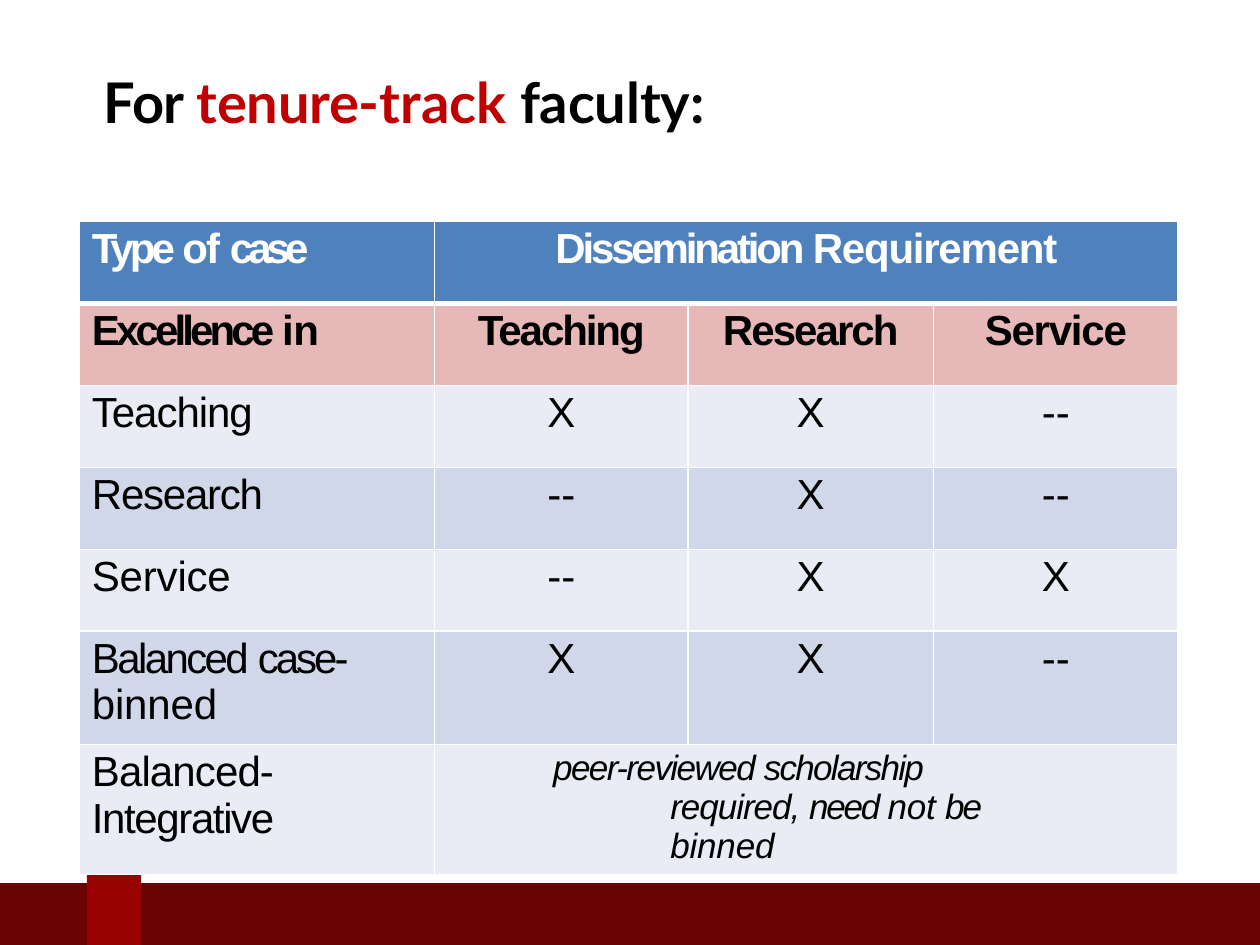
from dataclasses import dataclass

from lxml import etree
from pptx import Presentation, util as u
from pptx.dml.color import RGBColor
from pptx.enum import shapes, text
from pptx.oxml import ns


@dataclass(frozen=True)
class Theme:
    """Colours, typefaces and type sizes of the deck."""
    ink: str = "000000"
    white: str = "FFFFFF"
    accent: str = "C00000"
    bar: str = "690304"
    badge: str = "990000"
    header: str = "4F81BC"
    subheader: str = "E6B8B8"
    light: str = "E9ECF4"
    dark: str = "D0D7E8"
    title_face: str = "Lato"
    body_face: str = "Arial"
    title_size: int = 32
    body_size: int = 24
    note_size: int = 20


class SlideBuilder:
    """Adds styled elements to the current slide."""

    def __init__(self, page, theme):
        """Keep the page and its theme."""
        self.page = page
        self.theme = theme

    def fill_paragraph(self, para, spans, face, size, color, bold=False,
                       italic=False, left=0, hang=0, before=2):
        """Fill a paragraph with (text, spacing[, colour]) spans."""
        para.space_before = u.Pt(before)
        props = para._p.get_or_add_pPr()
        props.set("marL", str(u.Inches(left)))
        props.set("indent", str(u.Inches(hang)))
        fonts = [para.font]
        for words, spacing, *tint in spans:
            span = para.add_run()
            span.text = words
            span.font.color.rgb = RGBColor.from_string(tint[0] if tint else color)
            span._r.get_or_add_rPr().set("spc", str(round(spacing * 100)))
            fonts.append(span.font)
        for font in fonts:
            font.name, font.size = face, u.Pt(size)
            font.bold, font.italic = bold, italic

    def title(self, left, top, width, height, spans):
        """Add the slide heading."""
        box = self.page.shapes.add_textbox(
            u.Inches(left), u.Inches(top), u.Inches(width), u.Inches(height))
        frame = box.text_frame
        frame.word_wrap = True
        frame.vertical_anchor = text.MSO_ANCHOR.MIDDLE
        frame.margin_left = frame.margin_right = frame.margin_bottom = 0
        frame.margin_top = u.Inches(0.01)
        self.fill_paragraph(frame.paragraphs[0], spans, self.theme.title_face,
                            self.theme.title_size, self.theme.ink, bold=True,
                            left=0.01, before=1.1)

    def block(self, left, top, width, height, color):
        """Add a plain filled rectangle."""
        box = self.page.shapes.add_shape(
            shapes.MSO_SHAPE.RECTANGLE,
            u.Inches(left), u.Inches(top), u.Inches(width), u.Inches(height))
        box.shadow.inherit = False
        box.fill.solid()
        box.fill.fore_color.rgb = RGBColor.from_string(color)
        box.line.fill.background()

    def table(self, left, top, widths, heights):
        """Add an unstyled grid and return it."""
        grid = self.page.shapes.add_table(
            len(heights), len(widths), u.Inches(left), u.Inches(top),
            u.Inches(sum(widths)), u.Inches(sum(heights))).table
        grid.first_row = grid.horz_banding = False
        for column, width in zip(grid.columns, widths):
            column.width = u.Inches(width)
        for row, height in zip(grid.rows, heights):
            row.height = u.Inches(height)
        return grid

    def cell(self, cell, fill, top_line=1, bottom_line=1):
        """Set a cell's margins, borders and fill."""
        cell.margin_left = cell.margin_right = cell.margin_bottom = 0
        cell.margin_top = u.Inches(0.03)
        props = cell._tc.get_or_add_tcPr()
        for side, weight in zip("LRTB", (1, 1, top_line, bottom_line)):
            line = etree.SubElement(props, ns.qn(f"a:ln{side}"), w=str(u.Pt(weight)))
            paint = etree.SubElement(line, ns.qn("a:solidFill"))
            etree.SubElement(paint, ns.qn("a:srgbClr"), val=self.theme.white)
        cell.fill.solid()
        cell.fill.fore_color.rgb = RGBColor.from_string(fill)


def main():
    """Build the tenure-track slide."""
    deck = Presentation()
    deck.slide_width, deck.slide_height = u.Inches(10), u.Inches(7.5)
    theme = Theme()
    page = deck.slides.add_slide(deck.slide_layouts[6])
    builder = SlideBuilder(page, theme)

    builder.block(0, 7.01, 0.69, 0.49, theme.bar)
    builder.block(1.12, 7.01, 8.88, 0.49, theme.bar)
    builder.block(0.69, 6.93, 0.43, 0.57, theme.badge)
    builder.title(0.81, 0.52, 5.33, 0.56, [
        ("For ", -0.2), ("tenure-", -0.2, theme.accent),
        ("track ", 0, theme.accent), ("faculty:", -0.1)])

    cross = [("X", 0)]
    dashes = [("-", -0.8), ("-", -0.5)]
    rows = [
        [[("Type ", -2.3), ("of ", -1.1), ("case", -2.8)],
         [("Dissemination ", -1.8), ("Requirement", -0.7)]],
        [[("Excellence ", -2.2), ("in", -0.2)], [("Teaching", -1.2)],
         [("Research", -1.1)], [("Service", -0.7)]],
        [[("Teaching", -0.6)], cross, cross, dashes],
        [[("Research", -0.7)], dashes, cross, dashes],
        [[("Service", -0.1)], dashes, cross, cross],
        [[("Balanced ", -1.5), ("case- ", -1.7), ("binned", -0.1)],
         cross, cross, [("--", 0)]],
        [[("Balanced- ", -0.5), ("Integrative", -0.8)]],
    ]
    note = [("peer-reviewed ", -0.9), ("scholarship ", -1), ("required, ", -0.6),
            ("need ", -1.3), ("not ", -0.2), ("be ", -1.2), ("binned", -0.1)]
    fills = [theme.header, theme.subheader] + [theme.light, theme.dark] * 2 + [theme.light]

    grid = builder.table(0.63, 1.76, [2.82, 2.01, 1.95, 1.94], [0.65] * 5 + [0.9] * 2)
    for r, (row, fill) in enumerate(zip(rows, fills)):
        for c in range(4):
            builder.cell(grid.cell(r, c), fill, 3 if r == 1 else 1, 3 if r == 0 else 1)
        for c, spans in enumerate(row):
            para = grid.cell(r, c).text_frame.paragraphs[0]
            if c:
                para.alignment = text.PP_ALIGN.CENTER
            builder.fill_paragraph(para, spans, theme.body_face, theme.body_size,
                                   theme.white if r == 0 else theme.ink,
                                   bold=r < 2, left=0 if c else 0.1)
    for r in (0, 6):
        grid.cell(r, 1).merge(grid.cell(r, 3))
    note_cell = grid.cell(6, 1)
    note_cell.margin_right = u.Inches(1)
    builder.fill_paragraph(note_cell.text_frame.paragraphs[0], note, theme.body_face,
                           theme.note_size, theme.ink, italic=True,
                           left=1.87, hang=-0.93, before=2.3)

    deck.save("out.pptx")


if __name__ == "__main__":
    main()
